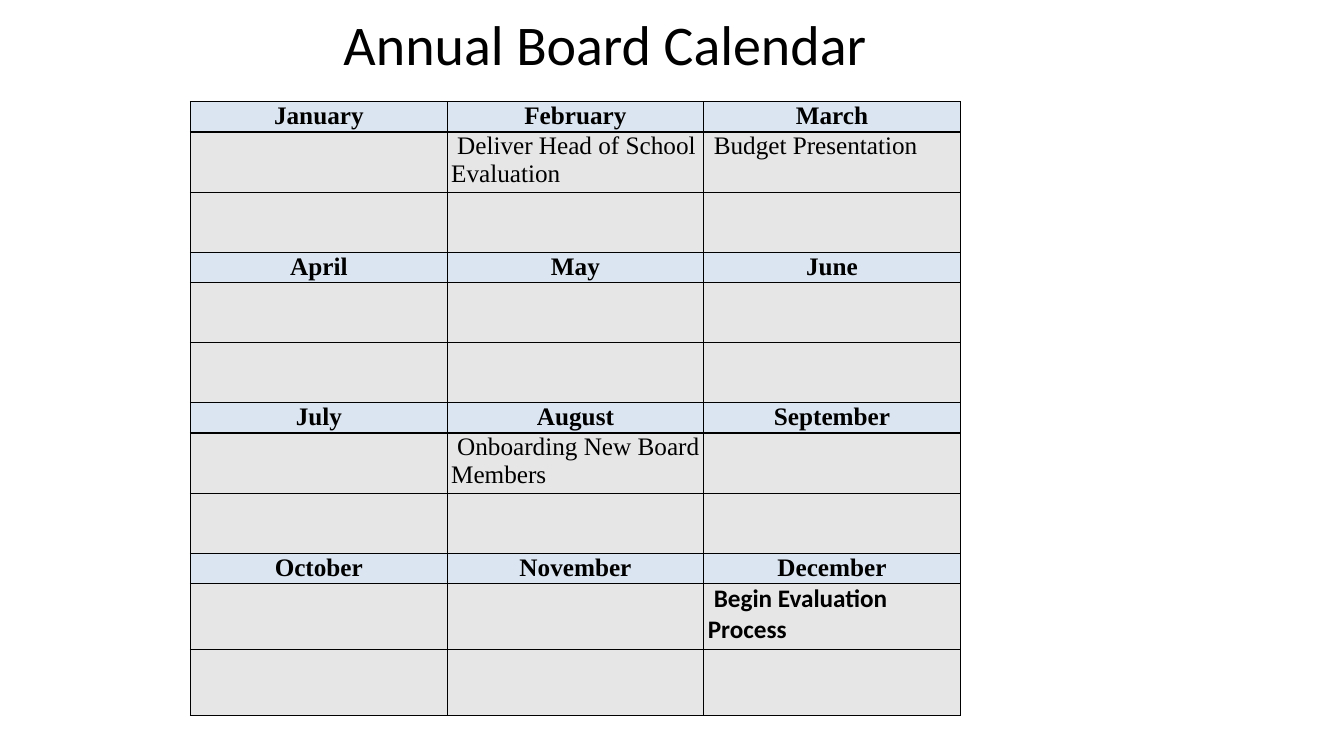
from lxml.etree import SubElement
from pptx import Presentation
from pptx.dml.color import RGBColor
from pptx.enum.text import MSO_ANCHOR as Anchor, PP_ALIGN as Align
from pptx.oxml.ns import qn
from pptx.util import Inches, Pt

BLACK, HEADER_FILL, BODY_FILL = "000000", "DBE5F1", "E7E6E6"
SERIF, SANS = "Times New Roman", "Calibri"
QUARTERS = [
    ("January", "February", "March"),
    ("April", "May", "June"),
    ("July", "August", "September"),
    ("October", "November", "December"),
]
EVENTS = {
    "February": "Deliver Head of School Evaluation",
    "March": "Budget Presentation",
    "August": "Onboarding New Board Members",
    "December": "Begin Evaluation Process",
}
ROWS_PER_QUARTER = 3
COLUMN_WIDTH = 2.545
HEADER_HEIGHT, BODY_HEIGHT, LAST_BODY_HEIGHT = 0.28, 0.595, 0.655


def color(value):
    """Return the colour for a hex string."""
    return RGBColor.from_string(value)


def style_font(para, size, name, bold=False):
    """Set the font of a paragraph."""
    font = para.font
    font.size, font.name, font.bold = Pt(size), name, bold
    font.color.rgb = color(BLACK)


def add_title(page, text):
    """Add the centred slide title."""
    box = page.shapes.add_textbox(Inches(0), Inches(0.17), Inches(12), Inches(1.25))
    frame = box.text_frame
    frame.word_wrap = True
    frame.vertical_anchor = Anchor.TOP
    frame.margin_top = Inches(0)
    para = frame.paragraphs[0]
    para.text = text
    para.alignment = Align.CENTER
    para.line_spacing = 0.9
    style_font(para, 40, SANS)


def add_borders(cell):
    """Draw a thin black line on all four sides of a cell."""
    properties = cell._tc.get_or_add_tcPr()
    for position, side in enumerate(("a:lnL", "a:lnR", "a:lnT", "a:lnB")):
        line = SubElement(properties, qn(side), w=str(Pt(1)))
        fill = SubElement(line, qn("a:solidFill"))
        SubElement(fill, qn("a:srgbClr"), val=BLACK)
        properties.insert(position, line)


def style_cell(cell, text, fill):
    """Fill and border a cell, write its text and return its paragraph."""
    cell.fill.solid()
    cell.fill.fore_color.rgb = color(fill)
    add_borders(cell)
    cell.margin_left = cell.margin_right = Inches(0.04)
    cell.margin_top = cell.margin_bottom = Inches(0)
    para = cell.text_frame.paragraphs[0]
    para.text = text
    style_font(para, 18, SERIF)
    return para


def fill_month(table, top, column, month):
    """Write a month heading and the two cells below it."""
    heading = style_cell(table.cell(top, column), month, HEADER_FILL)
    heading.alignment = Align.CENTER
    heading.font.bold = True
    event = style_cell(table.cell(top + 1, column), EVENTS.get(month, ""), BODY_FILL)
    event.space_after = Pt(3)
    event._p.get_or_add_pPr().set("indent", str(Inches(0.06)))
    if month == "December":
        style_font(event, 18, SANS, bold=True)
    style_cell(table.cell(top + 2, column), "", BODY_FILL)


def add_calendar(page):
    """Add the calendar table, one band of rows per quarter."""
    columns = len(QUARTERS[0])
    rows = len(QUARTERS) * ROWS_PER_QUARTER
    table = page.shapes.add_table(
        rows, columns, Inches(1.89), Inches(1.01), Inches(columns * COLUMN_WIDTH), Inches(6)
    ).table
    table.first_row = table.horz_banding = False
    for column in table.columns:
        column.width = Inches(COLUMN_WIDTH)
    for quarter, months in enumerate(QUARTERS):
        top = quarter * ROWS_PER_QUARTER
        body = LAST_BODY_HEIGHT if months is QUARTERS[-1] else BODY_HEIGHT
        for offset, height in enumerate((HEADER_HEIGHT, body, body)):
            table.rows[top + offset].height = Inches(height)
        for column, month in enumerate(months):
            fill_month(table, top, column, month)


def main():
    """Build and save the slide."""
    deck = Presentation()
    deck.slide_width, deck.slide_height = Inches(13.33), Inches(7.5)
    page = deck.slides.add_slide(deck.slide_layouts[6])
    add_title(page, "Annual Board Calendar")
    add_calendar(page)
    deck.save("out.pptx")


if __name__ == "__main__":
    main()
